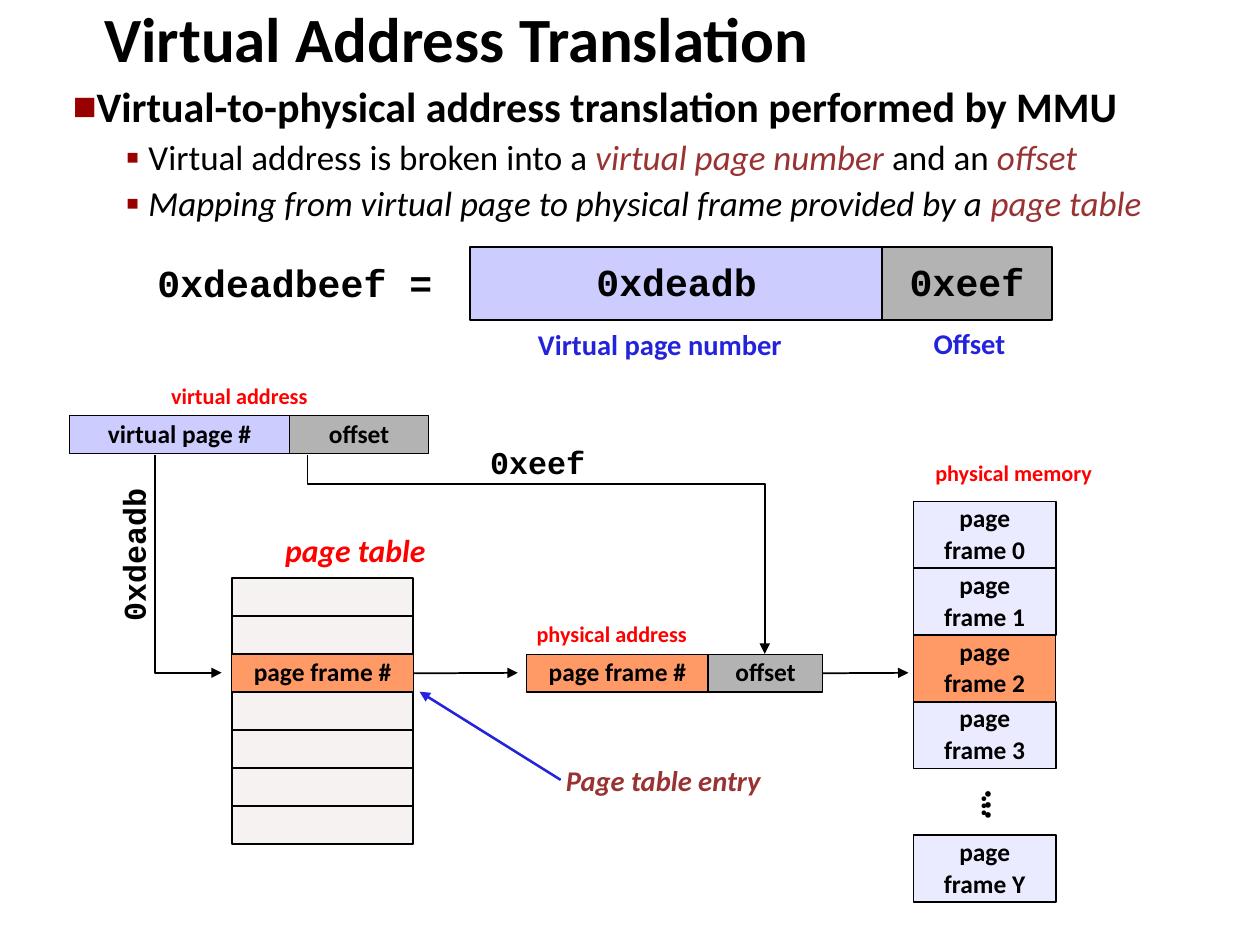
from dataclasses import dataclass

from lxml.etree import SubElement
from pptx import Presentation
from pptx.dml.color import RGBColor
from pptx.enum.shapes import MSO_CONNECTOR, MSO_SHAPE
from pptx.enum.text import MSO_ANCHOR, PP_ALIGN
from pptx.oxml.ns import qn
from pptx.util import Inches, Pt

SANS, MONO = "Calibri", "Courier New"
BLACK, RED, BLUE, MAROON = "000000", "FF0000", "2323DC", "993333"
LILAC, GREY, ORANGE, PALE, SHELL = "CCCCFF", "B3B3B3", "FF9966", "EBEBFF", "F6F2F2"
ROW_H, ROW_PITCH, TABLE_TOP = 0.3, 1.81 / 6, 4.59
FRAME_H, FRAME_TOP = 0.53, 3.98


@dataclass
class Box:
    x: float
    y: float
    w: float
    h: float
    fill: str
    text: str = ""
    size: float = 14.5
    font: str = SANS
    line: float = 0.75


@dataclass
class Label:
    text: str
    x: float
    y: float
    w: float
    h: float
    size: float
    color: str = BLACK
    font: str = SANS
    italic: bool = False
    centred: bool = False
    rotation: int = 0


@dataclass
class Bullet:
    runs: list[tuple[str, str, bool]]  # text, colour, italic
    size: int
    bold: bool
    indent: float
    char: str
    percent: int


def rgb(value: str) -> RGBColor:
    return RGBColor.from_string(value)


def style(r, size: float, color: str = BLACK, font: str = SANS,
          bold: bool = True, italic: bool = False) -> None:
    r.font.size, r.font.name = Pt(size), font
    r.font.bold, r.font.italic = bold, italic
    r.font.color.rgb = rgb(color)


def set_margins(tf, x: float, y: float) -> None:
    tf.margin_left = tf.margin_right = Inches(x)
    tf.margin_top = tf.margin_bottom = Inches(y)


def add_box(s, box: Box):
    sp = s.shapes.add_shape(MSO_SHAPE.RECTANGLE, Inches(box.x), Inches(box.y),
                            Inches(box.w), Inches(box.h))
    sp.shadow.inherit = False
    sp.fill.solid()
    sp.fill.fore_color.rgb = rgb(box.fill)
    sp.line.color.rgb = rgb(BLACK)
    sp.line.width = Pt(box.line)
    if box.text:
        tf = sp.text_frame
        tf.text = box.text
        tf.vertical_anchor = MSO_ANCHOR.MIDDLE
        set_margins(tf, 0.09, 0.05)
        for p in tf.paragraphs:
            p.alignment, p.line_spacing = PP_ALIGN.CENTER, 0.94
            p.space_before = Pt(1.8 if box.font == SANS else 0)
            style(p.runs[0], box.size, font=box.font)
    return sp


def add_label(s, label: Label) -> None:
    sp = s.shapes.add_textbox(Inches(label.x), Inches(label.y),
                              Inches(label.w), Inches(label.h))
    sp.rotation = label.rotation
    tf = sp.text_frame
    tf.text = label.text
    tf.word_wrap = label.centred
    p = tf.paragraphs[0]
    p.line_spacing = 0.94
    if label.centred:
        set_margins(tf, 0.09, 0.05)
        p.alignment, p.space_before = PP_ALIGN.CENTER, Pt(1.6)
    else:
        set_margins(tf, 0, 0)
        p.alignment = PP_ALIGN.LEFT
    style(p.runs[0], label.size, label.color, label.font, italic=label.italic)


def add_bullet(p, bullet: Bullet) -> None:
    p.line_spacing, p.space_before = 0.94, Pt(bullet.size * 0.2)
    for text, color, italic in bullet.runs:
        r = p.add_run()
        r.text = text
        style(r, bullet.size, color, bold=bullet.bold, italic=italic)
    pPr = p._p.get_or_add_pPr()
    pPr.set("marL", str(Inches(bullet.indent)))
    pPr.set("indent", str(Inches(-0.18)))
    SubElement(SubElement(pPr, qn("a:buClr")), qn("a:srgbClr"), val="990000")
    SubElement(pPr, qn("a:buSzPct"), val=str(bullet.percent * 1000))
    SubElement(pPr, qn("a:buFont"), typeface=SANS)
    SubElement(pPr, qn("a:buChar"), char=bullet.char)


def finish_arrow(sp, color: str, width: float) -> None:
    sp.line.color.rgb = rgb(color)
    sp.line.width = Pt(width)
    SubElement(sp.line._get_or_add_ln(), qn("a:tailEnd"), type="triangle")


def add_arrow(s, x1: float, y1: float, x2: float, y2: float,
              color: str = BLACK, width: float = 1, source=None) -> None:
    c = s.shapes.add_connector(MSO_CONNECTOR.STRAIGHT, Inches(x1), Inches(y1),
                               Inches(x2), Inches(y2))
    if source is not None:
        c.begin_connect(source, 3)
    finish_arrow(c, color, width)
    SubElement(c._element.spPr, qn("a:effectLst"))


def add_bent_arrow(s, points: list[tuple[float, float]]) -> None:
    start, *rest = [(Inches(x), Inches(y)) for x, y in points]
    builder = s.shapes.build_freeform(*start)
    builder.add_line_segments(rest, close=False)
    sp = builder.convert_to_shape()
    sp.fill.background()
    finish_arrow(sp, BLACK, 1)
    sp.shadow.inherit = False


def main() -> None:
    prs = Presentation()
    prs.slide_width, prs.slide_height = Inches(10), Inches(7.5)
    s = prs.slides.add_slide(prs.slide_layouts[6])

    # Title
    tf = s.shapes.add_textbox(Inches(0.73), Inches(0.1), Inches(8.54), Inches(0.46)).text_frame
    tf.text = "Virtual Address Translation"
    tf.word_wrap, tf.vertical_anchor = True, MSO_ANCHOR.MIDDLE
    tf.paragraphs[0].line_spacing = 0.94
    style(tf.paragraphs[0].runs[0], 36)

    # Bullets
    bullets = [
        Bullet([("Virtual-to-physical address translation performed by MMU", BLACK, False)],
               24, True, 0.28, "■", 60),
        Bullet([("Virtual address is broken into a ", BLACK, False),
                ("virtual page number", MAROON, True),
                (" and an ", BLACK, False), ("offset", MAROON, True)],
               20, False, 0.7, "▪", 110),
        Bullet([("Mapping from virtual page to physical frame provided by a ", BLACK, True),
                ("page table", MAROON, True)], 20, False, 0.7, "▪", 110),
    ]
    tf = s.shapes.add_textbox(Inches(0.38), Inches(0.62), Inches(9.42), Inches(1.3)).text_frame
    tf.word_wrap = True
    for i, bullet in enumerate(bullets):
        add_bullet(tf.add_paragraph() if i else tf.paragraphs[0], bullet)

    # Example address, virtual address and physical address
    entry_y = TABLE_TOP + 2 * ROW_PITCH
    for box in (Box(3.73, 1.96, 3.28, 0.58, LILAC, "0xdeadb", 21.8, MONO),
                Box(7, 1.96, 1.35, 0.58, GREY, "0xeef", 21.8, MONO),
                Box(0.55, 3.3, 1.75, ROW_H, LILAC, "virtual page #"),
                Box(2.3, 3.3, 1.1, ROW_H, GREY, "offset"),
                Box(4.18, entry_y, 1.44, ROW_H, ORANGE, "page frame #")):
        add_box(s, box)
    offset = add_box(s, Box(5.62, entry_y, 0.91, ROW_H, GREY, "offset"))

    # Page table
    rows = ["", "", "page frame #", "", "", "", ""]
    table = [add_box(s, Box(1.84, TABLE_TOP + i * ROW_PITCH, 1.44, ROW_PITCH,
                            ORANGE if text else SHELL, text, line=0.75 if text else 1))
             for i, text in enumerate(rows)]

    # Physical memory, with a gap before the last frame
    for slot, name in ((0, "0"), (1, "1"), (3, "3"), (5, "Y"), (2, "2")):
        used = name == "2"
        add_box(s, Box(7.25, FRAME_TOP + slot * FRAME_H, 1.13, FRAME_H,
                       ORANGE if used else PALE, f"page\nframe {name}",
                       line=0.75 if used else 1))

    # Labels
    for label in (
        Label("0xdeadbeef =", 1.25, 2.09, 2.3, 0.35, 21.8, font=MONO),
        Label("Virtual page number", 4.27, 2.62, 2.23, 0.26, 16.3, BLUE),
        Label("Offset", 7.41, 2.61, 0.61, 0.26, 16.3, BLUE),
        Label("virtual address", 1.03, 3, 1.74, 0.3, 12.7, RED, centred=True),
        Label("physical memory", 7.02, 3.61, 2.05, 0.3, 12.7, RED, centred=True),
        Label("physical address", 3.86, 4.89, 1.99, 0.3, 12.7, RED, centred=True),
        Label("page table", 2.02, 4.19, 1.6, 0.3, 18.1, RED, italic=True, centred=True),
        Label("Page table entry", 4.49, 6.08, 1.69, 0.26, 16.3, MAROON, italic=True),
        Label("0xdeadb", 0.49, 4.2, 1.17, 0.29, 18.1, font=MONO, rotation=270),
        Label("0xeef", 3.89, 3.54, 0.85, 0.29, 18.1, font=MONO),
        Label("…", 7.53, 6.2, 0.43, 0.39, 18.1, centred=True, rotation=270),
        Label("...", 7.62, 6.18, 0.3, 0.36, 21.8, rotation=270),
    ):
        add_label(s, label)

    # Arrows
    add_bent_arrow(s, [(1.23, 3.61), (1.23, 5.34), (1.76, 5.34)])
    add_bent_arrow(s, [(2.44, 3.61), (2.44, 3.84), (6.07, 3.84), (6.07, 5.19)])
    add_arrow(s, 3.28, 5.34, 4.11, 5.34, source=table[2])
    add_arrow(s, 6.53, 5.34, 7.21, 5.34, source=offset)
    add_arrow(s, 4.45, 6.19, 3.33, 5.49, BLUE, 1.45)

    prs.save("out.pptx")


if __name__ == "__main__":
    main()
